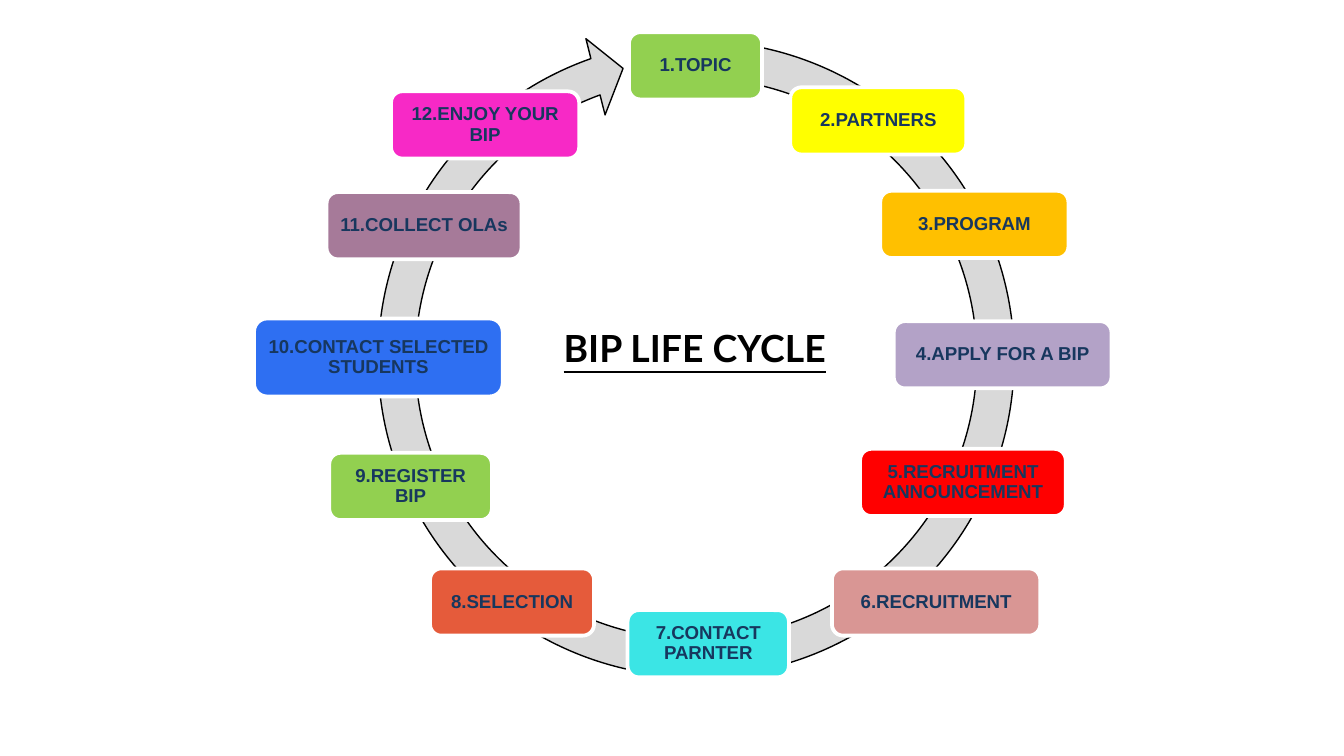
from pptx import Presentation
from pptx.dml.color import RGBColor
from pptx.enum import shapes, text
from pptx.util import Inches, Pt

STEPS = [
    ("1.TOPIC", "92D050", 2.02, 0.09, 0.99, 0.5),
    ("2.PARTNERS", "FFFF00", 3.22, 0.5, 1.31, 0.5),
    ("3.PROGRAM", "FFC000", 3.89, 1.27, 1.4, 0.5),
    ("4.APPLY FOR A BIP", "B3A2C7", 3.99, 2.24, 1.62, 0.5),
    ("5.RECRUITMENT ANNOUNCEMENT", "FF0000", 3.74, 3.19, 1.53, 0.5),
    ("6.RECRUITMENT", "D99694", 3.53, 4.08, 1.55, 0.5),
    ("7.CONTACT PARNTER", "3BE5E5", 2.01, 4.39, 1.2, 0.5),
    ("8.SELECTION", "E55B3B", 0.54, 4.08, 1.22, 0.5),
    ("9.REGISTER BIP", "92D050", -0.21, 3.22, 1.21, 0.5),
    ("10.CONTACT SELECTED STUDENTS", "2E6FF2", -0.77, 2.22, 1.85, 0.58),
    ("11.COLLECT OLAs", "A67A99", -0.23, 1.28, 1.45, 0.5),
    ("12.ENJOY YOUR BIP", "F729C6", 0.25, 0.53, 1.4, 0.5),
]


def rgb(value):
    """Turn a hex string into a colour."""
    return RGBColor.from_string(value)


def add_block(s, kind, box, fill, line, weight):
    """Add a filled, outlined preset shape without a shadow."""
    sp = s.shapes.add_shape(kind, *map(Inches, box))
    sp.shadow.inherit = False
    sp.fill.solid()
    sp.fill.fore_color.rgb = rgb(fill)
    sp.line.color.rgb = rgb(line)
    sp.line.width = Pt(weight)
    return sp


def write(sp, words, font, size, color, inset):
    """Write one centred bold paragraph into a shape."""
    tf = sp.text_frame
    tf.word_wrap = True
    tf.vertical_anchor = text.MSO_ANCHOR.MIDDLE
    tf.margin_left = tf.margin_right = Inches(inset)
    tf.margin_top = tf.margin_bottom = Inches(0.05)
    p = tf.paragraphs[0]
    p.text = words
    p.alignment = text.PP_ALIGN.CENTER
    p.font.name = font
    p.font.size = Pt(size)
    p.font.bold = True
    p.font.color.rgb = rgb(color)
    return p


def add_cycle(s, left, top, size):
    """Draw the circular arrow and the steps placed around it."""
    ring = add_block(s, shapes.MSO_SHAPE.CIRCULAR_ARROW,
                     (left, top, size, size), "D9D9D9", "000000", 0.75)
    for i, value in enumerate((0.055, 3.307, 150.218, 166.652, 0.058)):
        ring.adjustments[i] = value
    for words, fill, dx, dy, width, height in STEPS:
        sp = add_block(s, shapes.MSO_SHAPE.ROUNDED_RECTANGLE,
                       (left + dx, top + dy, width, height), fill, "FFFFFF", 2)
        p = write(sp, words, "Arial", 10, "17375E", 0.06)
        p.line_spacing = 0.9


def add_title(s, left, top, width, height):
    """Add the underlined title in the middle of the cycle."""
    sp = s.shapes.add_textbox(*map(Inches, (left, top, width, height)))
    p = write(sp, "BIP LIFE CYCLE", "Lato", 20, "000000", 0.1)
    p.font.underline = True


def main():
    """Build and save the slide."""
    prs = Presentation()
    prs.slide_width = Inches(10)
    prs.slide_height = prs.slide_width * 9 // 16
    s = prs.slides.add_slide(prs.slide_layouts[6])
    add_cycle(s, 2.66, 0.15, 5.04)
    add_title(s, 4.04, 2.37, 2.26, 0.43)
    prs.save("out.pptx")


if __name__ == "__main__":
    main()
